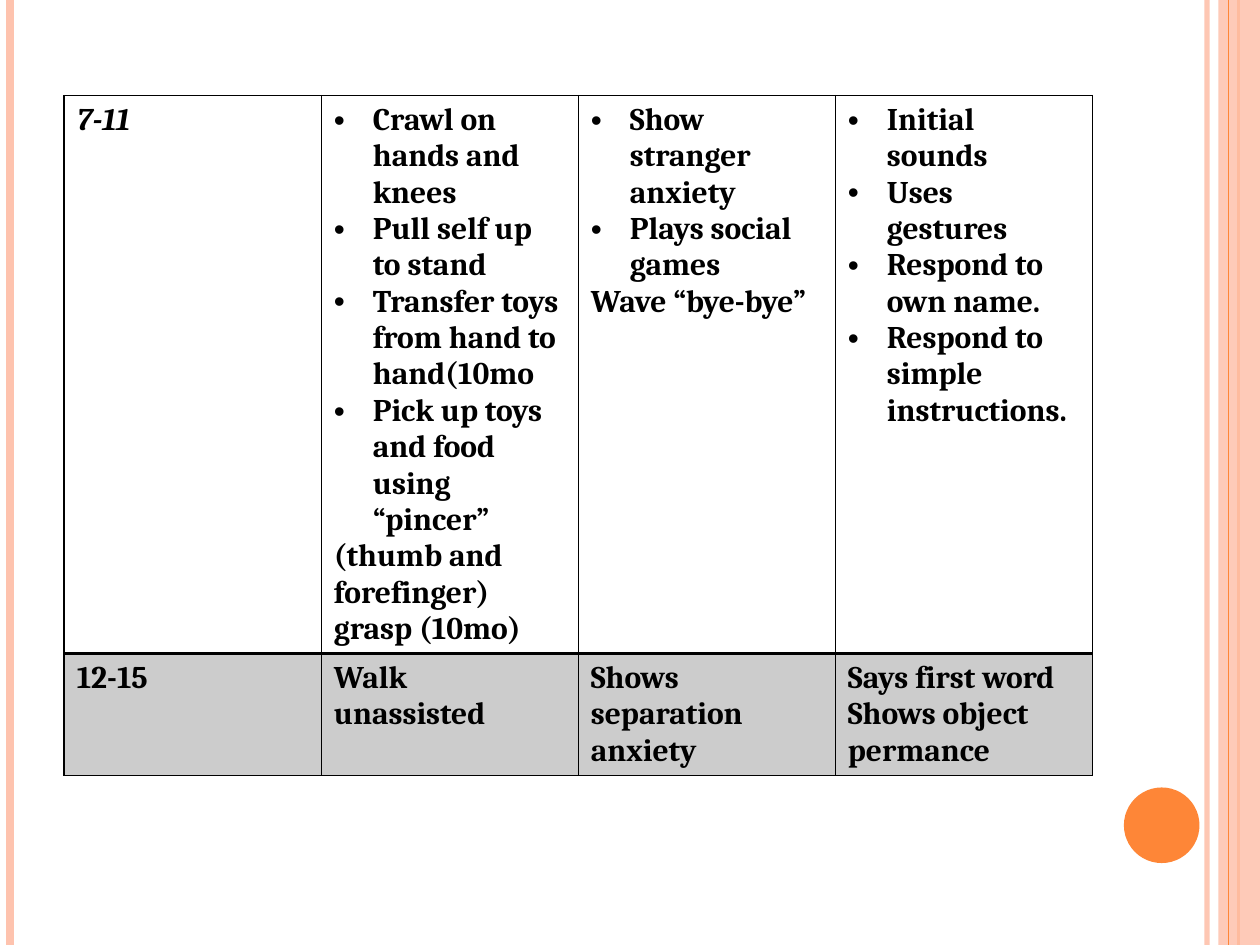
from lxml.etree import SubElement
from pptx import Presentation
from pptx.dml.color import RGBColor
from pptx.enum.shapes import MSO_CONNECTOR as LINE, MSO_SHAPE as SHAPE
from pptx.oxml.ns import qn
from pptx.util import Inches, Pt

PEACH = RGBColor(0xFE, 0xC3, 0xAE)
ORANGE = RGBColor(0xFE, 0x86, 0x37)
BLACK = RGBColor(0, 0, 0)


def set_alpha(parent, percent):
    color = next(parent.iter(qn("a:srgbClr")))
    SubElement(color, qn("a:alpha"), val=str(percent * 1000))


def add_stripe(page, x, color, width):
    stripe = page.shapes.add_connector(
        LINE.STRAIGHT, Inches(x), Inches(0), Inches(x), Inches(7.5))
    stripe.line.color.rgb = color
    stripe.line.width = Pt(width)
    SubElement(stripe._element.spPr, qn("a:effectLst"))
    return stripe


deck = Presentation()
deck.slide_width = Inches(10)
deck.slide_height = Inches(7.5)
page = deck.slides.add_slide(deck.slide_layouts[6])

inner_stripe = add_stripe(page, 9.58, PEACH, 3)
set_alpha(inner_stripe._element.spPr, 93)
add_stripe(page, 0.08, PEACH, 4.5)
add_stripe(page, 9.83, ORANGE, 1.5)

band = page.shapes.add_shape(
    SHAPE.RECTANGLE, Inches(9.67), Inches(0), Inches(0.33), Inches(7.5))
add_stripe(page, 9.75, ORANGE, 0.75)
disc = page.shapes.add_shape(
    SHAPE.OVAL, Inches(8.92), Inches(6.25), Inches(0.6), Inches(0.6))
for shape, color in ((band, PEACH), (disc, ORANGE)):
    shape.shadow.inherit = False
    shape.fill.solid()
    shape.fill.fore_color.rgb = color
    shape.line.fill.background()
set_alpha(band._element.spPr, 87)

milestones = [
    [
        ["7-11"],
        ["• Crawl on hands and knees",
         "• Pull self up to stand",
         "• Transfer toys from hand to hand(10mo",
         "• Pick up toys and food using “pincer”",
         "(thumb and forefinger) grasp (10mo)"],
        ["• Show stranger anxiety", "• Plays social games", "Wave “bye-bye”"],
        ["• Initial sounds", "• Uses gestures", "• Respond to own name.",
         "• Respond to simple instructions."],
    ],
    [
        ["12-15"],
        ["Walk unassisted"],
        ["Shows separation anxiety"],
        ["Says first word", "Shows object permance"],
    ],
]

table = page.shapes.add_table(
    2, 4, Inches(0.51), Inches(0.76), Inches(8.17), Inches(5.39)).table
table.first_row = False
table.horz_banding = False
for column in table.columns:
    column.width = Inches(2.04)
for row, height in zip(table.rows, (4.43, 0.96)):
    row.height = Inches(height)

for row_index, row_texts in enumerate(milestones):
    for column_index, texts in enumerate(row_texts):
        cell = table.cell(row_index, column_index)
        props = cell._tc.get_or_add_tcPr()
        divider = "lnT" if row_index else "lnB"
        for side in ("lnL", "lnR", "lnT", "lnB"):
            width = Pt(2 if side == divider else 1)
            border = SubElement(props, qn(f"a:{side}"), w=str(width))
            paint = SubElement(border, qn("a:solidFill"))
            SubElement(paint, qn("a:srgbClr"), val=str(BLACK))
        if row_index:
            cell.fill.solid()
            cell.fill.fore_color.rgb = BLACK
            set_alpha(props.find(qn("a:solidFill")), 20)
        else:
            cell.fill.background()

        frame = cell.text_frame
        for index, text in enumerate(texts):
            para = frame.add_paragraph() if index else frame.paragraphs[0]
            if text.startswith("• "):
                para_props = para._p.get_or_add_pPr()
                para_props.set("marL", str(Inches(0.31)))
                para_props.set("indent", str(-Inches(0.31)))
                SubElement(para_props, qn("a:buFont"), typeface="Arial")
                SubElement(para_props, qn("a:buChar"), char="•")
            span = para.add_run()
            span.text = text.removeprefix("• ")
            span.font.name = "Cambria"
            span.font.size = Pt(18)
            span.font.bold = True
            span.font.italic = row_index == column_index == 0
            span.font.color.rgb = BLACK

deck.save("out.pptx")
